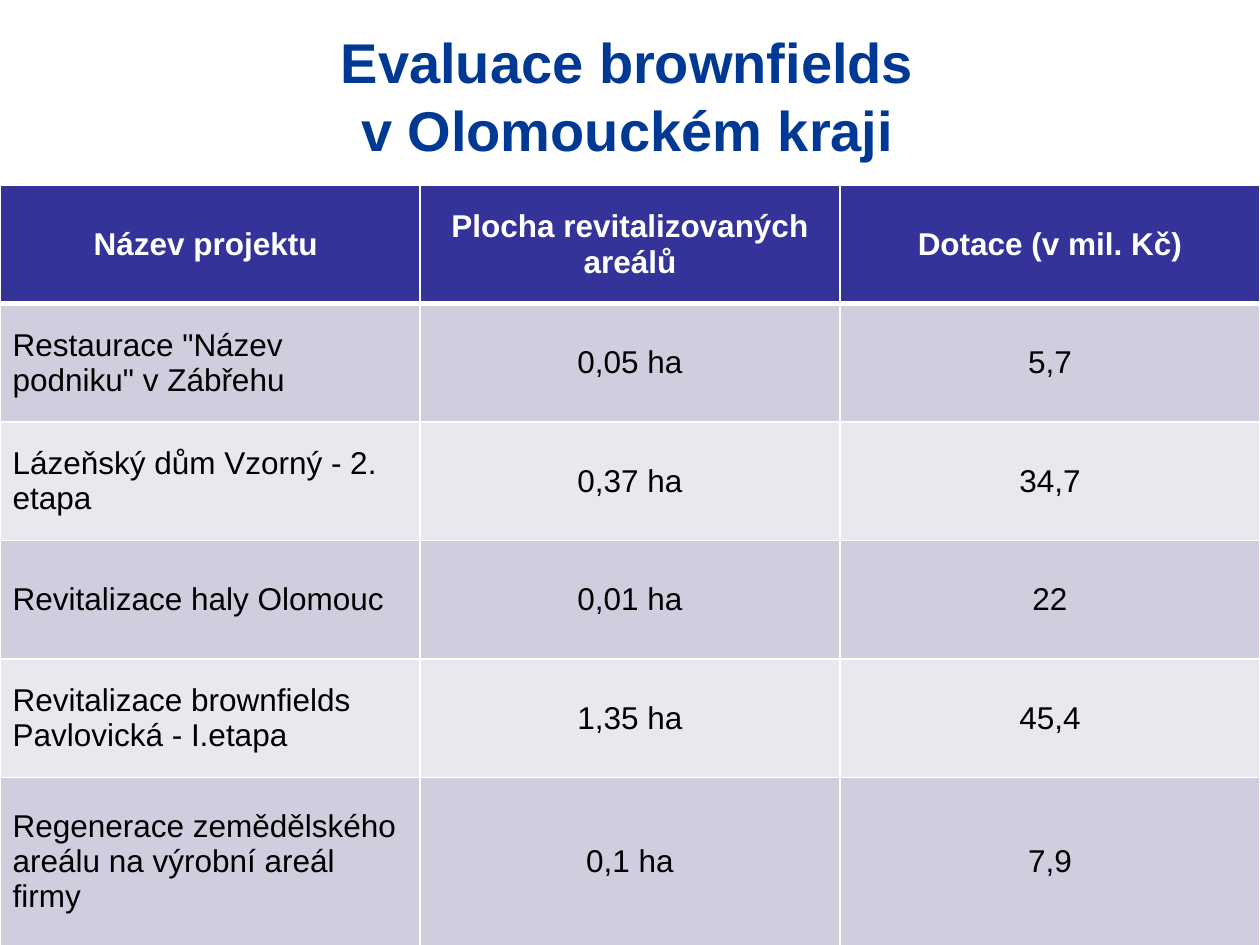
import pptx
import pptx.util
import pptx.dml.color
import pptx.enum.text
import pptx.oxml
import pptx.oxml.ns

Inches, Pt = pptx.util.Inches, pptx.util.Pt
RGB = pptx.dml.color.RGBColor.from_string
ALIGN = pptx.enum.text.PP_ALIGN
MIDDLE = pptx.enum.text.MSO_ANCHOR.MIDDLE

COLORS = {
    "title": "003994",
    "header": "333399",
    "odd": "CECEDE",
    "even": "E8E8EF",
    "white": "FFFFFF",
    "text": "000000",
}
ROWS = [
    ("Název projektu ", "Plocha revitalizovaných areálů", "Dotace (v mil. Kč)"),
    ('Restaurace "Název podniku" v Zábřehu', "0,05 ha", "5,7"),
    ("Lázeňský dům Vzorný - 2. etapa", "0,37 ha", "34,7"),
    ("Revitalizace haly Olomouc", "0,01 ha", "22"),
    ("Revitalizace brownfields Pavlovická - I.etapa", "1,35 ha", "45,4"),
    ("Regenerace zemědělského areálu na výrobní areál firmy", "0,1 ha", "7,9"),
]
HEIGHTS = [0.94] * 5 + [1.34]


def format_text(p, size, color, bold, align):
    p.alignment = align
    for r in p.runs:
        r.font.name = "Arial"
        r.font.size = Pt(size)
        r.font.bold = bold
        r.font.color.rgb = RGB(COLORS[color])


def add_border(tcPr, side, width):
    ln = pptx.oxml.parse_xml(
        f'<a:{side} {pptx.oxml.ns.nsdecls("a")} w="{Pt(width)}"><a:solidFill>'
        f'<a:srgbClr val="{COLORS["white"]}"/></a:solidFill></a:{side}>'
    )
    tcPr.append(ln)


prs = pptx.Presentation()
prs.slide_width, prs.slide_height = Inches(10), Inches(7.5)
s = prs.slides.add_slide(prs.slide_layouts[5])

title = s.shapes.title
title.left, title.top = Inches(2.42), Inches(0.13)
title.width, title.height = Inches(5.12), Inches(1.25)
tf = title.text_frame
tf.text = "Evaluace brownfields v Olomouckém kraji"
tf.word_wrap = True
tf.auto_size = pptx.enum.text.MSO_AUTO_SIZE.NONE
tf.vertical_anchor = MIDDLE
tf.margin_left = tf.margin_right = Inches(0.2)
format_text(tf.paragraphs[0], 32, "title", True, ALIGN.CENTER)

table = s.shapes.add_table(
    len(ROWS), 3, Inches(0), Inches(1.47), Inches(10), Inches(sum(HEIGHTS))
).table
for row, height in zip(table.rows, HEIGHTS):
    row.height = Inches(height)

for i, values in enumerate(ROWS):
    header = i == 0
    fill = "header" if header else "odd" if i % 2 else "even"
    for j, value in enumerate(values):
        cell = table.cell(i, j)
        cell.text = value
        cell.vertical_anchor = MIDDLE
        align = ALIGN.CENTER if header or j else ALIGN.LEFT
        color = "white" if header else "text"
        format_text(cell.text_frame.paragraphs[0], 18, color, header, align)
        tcPr = cell._tc.get_or_add_tcPr()
        for side in ("lnL", "lnR", "lnT", "lnB"):
            thick = (header and side == "lnB") or (i == 1 and side == "lnT")
            add_border(tcPr, side, 3 if thick else 1)
        cell.fill.solid()
        cell.fill.fore_color.rgb = RGB(COLORS[fill])

prs.save("out.pptx")
